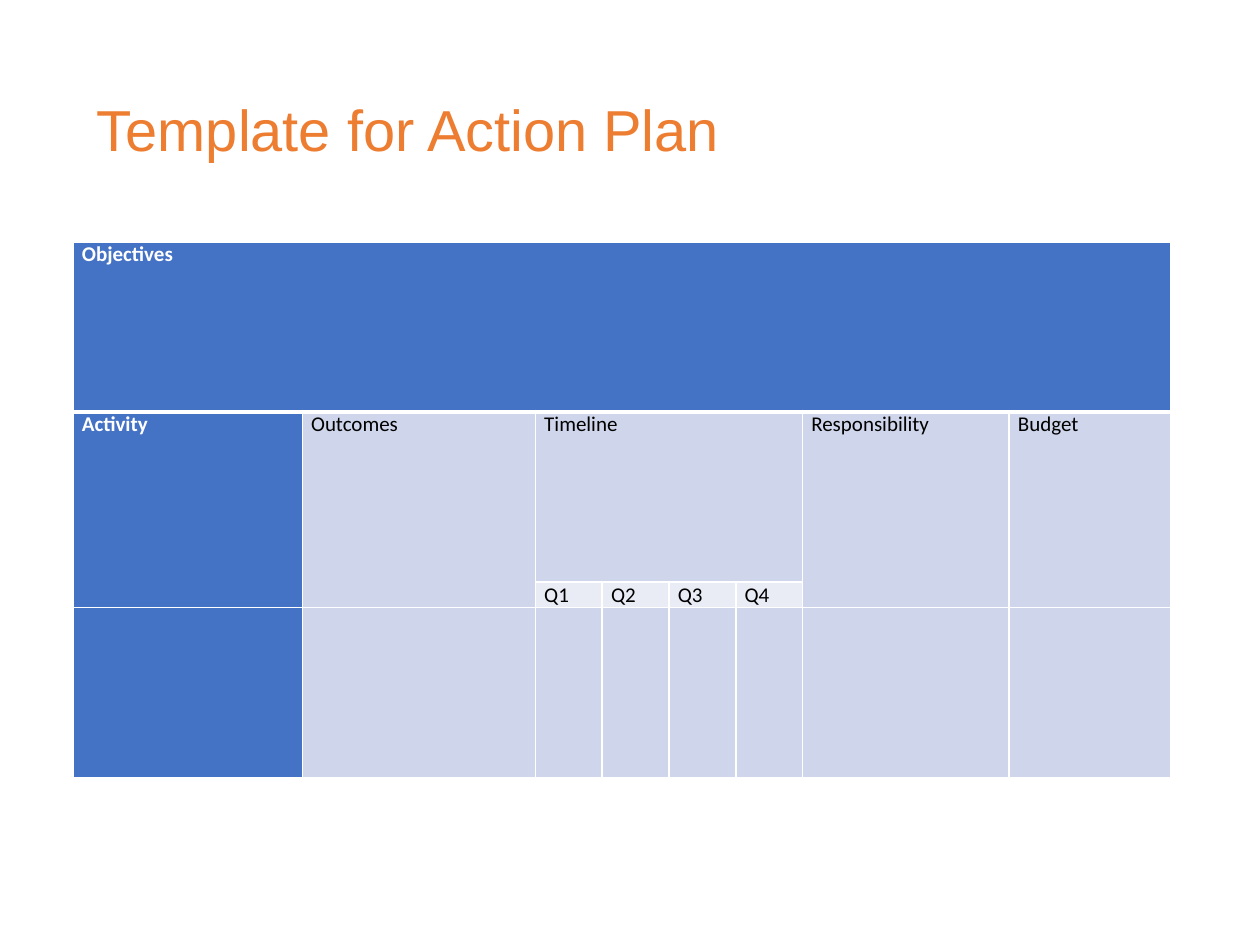
from dataclasses import dataclass

from lxml import etree
from pptx import Presentation
from pptx.dml.color import RGBColor
from pptx.enum.text import MSO_ANCHOR
from pptx.oxml.ns import qn
from pptx.slide import Slide
from pptx.util import Inches, Pt

MIDDLE = MSO_ANCHOR.MIDDLE
ORANGE = RGBColor(0xED, 0x7D, 0x31)
BLUE = RGBColor(0x44, 0x72, 0xC4)
PALE_BLUE = RGBColor(0xCF, 0xD5, 0xEA)
LIGHT_BLUE = RGBColor(0xE9, 0xEB, 0xF5)
WHITE = RGBColor(0xFF, 0xFF, 0xFF)
BLACK = RGBColor(0, 0, 0)

WIDTH, HEIGHT = 10, 7.5
COLUMNS = [1.82, 1.85] + [0.53] * 4 + [1.64, 1.28]
ROWS = [1.35, 1.35, 0.2, 1.35]
LABELS = {
    (0, 0): "Objectives",
    (1, 0): "Activity",
    (1, 1): "Outcomes",
    (1, 2): "Timeline",
    (1, 6): "Responsibility",
    (1, 7): "Budget",
    **{(2, 2 + index): f"Q{index + 1}" for index in range(4)},
}
MERGES = [((0, 0), (0, 7)), ((1, 2), (1, 5))]
MERGES += [((1, column), (2, column)) for column in (0, 1, 6, 7)]


@dataclass
class ActionPlanSlide:
    """Draws the parts of an action plan on one slide."""

    slide: Slide
    title_font: str = "Arial"
    table_font: str = "Calibri"

    def style(self, paragraph, name, size, color, bold=False):
        font = paragraph.font
        font.name, font.size, font.bold = name, Pt(size), bold
        font.color.rgb = color

    def title(self, text, left, top, width, height):
        box = self.slide.shapes.add_textbox(
            Inches(left * WIDTH), Inches(top * HEIGHT),
            Inches(width * WIDTH), Inches(height * HEIGHT))
        frame = box.text_frame
        frame.word_wrap = True
        frame.vertical_anchor = MIDDLE
        paragraph = frame.paragraphs[0]
        paragraph.text = text
        paragraph.line_spacing = 0.9
        self.style(paragraph, self.title_font, 33, ORANGE)

    def border(self, cell, side, width):
        properties = cell._tc.get_or_add_tcPr()
        line = etree.SubElement(properties, qn(f"a:ln{side}"), w=str(Pt(width)))
        fill = etree.SubElement(line, qn("a:solidFill"))
        etree.SubElement(fill, qn("a:srgbClr"), val=str(WHITE))

    def cell(self, cell, row, column):
        heading = row == 0 or column == 0
        cell.margin_left = cell.margin_right = Inches(0.07)
        cell.margin_top = cell.margin_bottom = 0
        thick_side = {0: "B", 1: "T"}.get(row)
        for side in "LRTB":
            self.border(cell, side, 3 if side == thick_side else 1)
        cell.fill.solid()
        cell.fill.fore_color.rgb = (
            BLUE if heading else LIGHT_BLUE if row == 2 else PALE_BLUE)
        cell.text = LABELS.get((row, column), "")
        self.style(cell.text_frame.paragraphs[0], self.table_font, 12,
                   WHITE if heading else BLACK, heading)

    def table(self, left, top):
        table = self.slide.shapes.add_table(
            len(ROWS), len(COLUMNS), Inches(left * WIDTH), Inches(top * HEIGHT),
            Inches(sum(COLUMNS)), Inches(sum(ROWS))).table
        for column, width in zip(table.columns, COLUMNS):
            column.width = Inches(width)
        for row, height in zip(table.rows, ROWS):
            row.height = Inches(height)
        for row in range(len(ROWS)):
            for column in range(len(COLUMNS)):
                self.cell(table.cell(row, column), row, column)
        for first, last in MERGES:
            table.cell(*first).merge(table.cell(*last))


def main():
    presentation = Presentation()
    presentation.slide_width = Inches(WIDTH)
    presentation.slide_height = Inches(HEIGHT)
    slide = presentation.slides.add_slide(presentation.slide_layouts[6])
    plan = ActionPlanSlide(slide)
    plan.title("Template for Action Plan", 0.067, 0.044, 0.862, 0.193)
    plan.table(0.058, 0.256)
    presentation.save("out.pptx")


if __name__ == "__main__":
    main()
